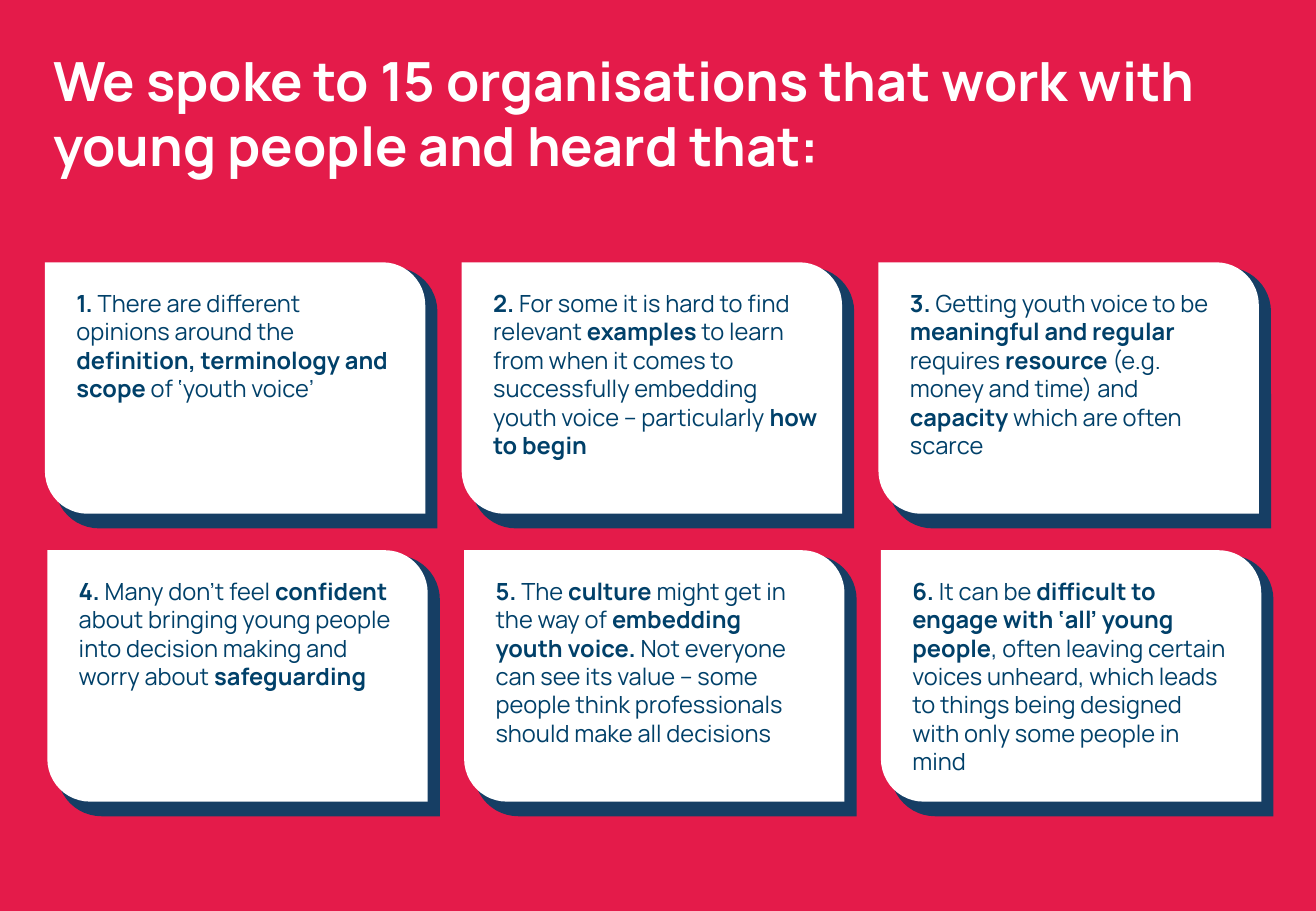
from pptx import Presentation
from pptx.dml.color import RGBColor
from pptx.enum.shapes import MSO_SHAPE
from pptx.enum.text import MSO_ANCHOR, MSO_AUTO_SIZE, PP_ALIGN
from pptx.util import Pt

PX = 9144
HUES = {"red": "E41B4A", "navy": "163E64", "ink": "004069", "white": "FFFFFF"}
TITLE = "We spoke to 15 organisations that work with young people and heard that:"
CARDS = [
    (280, 104, "**1. **There are different opinions around the "
     "**definition, terminology and scope **of ‘youth voice’"),
    (289, 151, "**2. **For some it is hard to find relevant** examples **to learn from "
     "when it comes to successfully embedding youth voice – particularly **how to begin**"),
    (280, 151, "**3. **Getting youth voice to be **meaningful and regular **requires "
     "**resource** (e.g. money and time) and** capacity** which are often scarce"),
    (280, 146, "**4. **Many don't feel **confident **about bringing young people into "
     "decision making and worry about **safeguarding**"),
    (280, 151, "**5. **The **culture** might get in the way of** embedding youth voice. **"
     "Not everyone can see its value – some people think professionals should make "
     "all decisions"),
    (280, 199, "**6. **It can be **difficult to engage with ‘all’ young people**, often "
     "leaving certain voices unheard, which leads to things being designed with only "
     "some people in mind"),
]


def hue(name):
    return RGBColor.from_string(HUES[name])


def assign(item, values):
    for key, value in values.items():
        setattr(item, key, value)


class Deck:
    """Holds the style and the current slide, and draws each kind of element."""

    font = "Manrope"
    frame = {"word_wrap": True, "vertical_anchor": MSO_ANCHOR.TOP}

    def __init__(self, wide, high):
        self.show = Presentation()
        assign(self.show, {"slide_width": wide * PX, "slide_height": high * PX})

    def slide(self, back):
        self.page = self.show.slides.add_slide(self.show.slide_layouts[5])
        fill = self.page.background.fill
        fill.solid()
        fill.fore_color.rgb = hue(back)

    def runs(self, para, text, size, color):
        for spot, part in enumerate(text.split("**")):
            if part:
                run = para.add_run()
                run.text = part
                assign(run.font, {"name": self.font, "size": Pt(size), "bold": spot % 2 == 1})
                run.font.color.rgb = hue(color)

    def title(self, text, x, y, w, h):
        head = self.page.shapes.title
        assign(head, {"left": x * PX, "top": y * PX, "width": w * PX, "height": h * PX})
        sides = ("margin_left", "margin_top", "margin_right", "margin_bottom")
        assign(head.text_frame, {**self.frame, "auto_size": MSO_AUTO_SIZE.NONE,
                                 **{side: 10 * PX for side in sides}})
        para = head.text_frame.paragraphs[0]
        para.alignment = PP_ALIGN.LEFT
        self.runs(para, f"**{text}**", 32, "white")

    def leaf(self, group, x, y, w, h, color):
        form = group.shapes.add_shape(
            MSO_SHAPE.ROUND_2_DIAG_RECTANGLE, x * PX, y * PX, w * PX, h * PX)
        form.adjustments[0], form.adjustments[1] = 0, 0.17
        form.shadow.inherit = False
        form.fill.solid()
        form.fill.fore_color.rgb = hue(color)
        form.line.fill.background()

    def card(self, x, y):
        group = self.page.shapes.add_group_shape()
        self.leaf(group, x + 8, y + 4, 315, 215, "navy")
        self.leaf(group, x, y, 313, 207, "white")

    def text(self, text, x, y, w, h):
        box = self.page.shapes.add_textbox(x * PX, y * PX, w * PX, h * PX)
        assign(box.text_frame, {**self.frame, "auto_size": MSO_AUTO_SIZE.SHAPE_TO_FIT_TEXT})
        self.runs(box.text_frame.paragraphs[0], text, 14, "ink")


def main():
    deck = Deck(1083, 750)
    deck.slide("red")
    deck.title(TITLE, 34, 29, 1015, 128)
    for spot, (wide, high, text) in enumerate(CARDS):
        row, col = divmod(spot, 3)
        x, y = 37 + 343 * col + 2 * row, 216 + 237 * row
        deck.card(x, y)
        deck.text(text, x + 16, y + 17, wide, high)
    deck.show.save("out.pptx")


if __name__ == "__main__":
    main()
